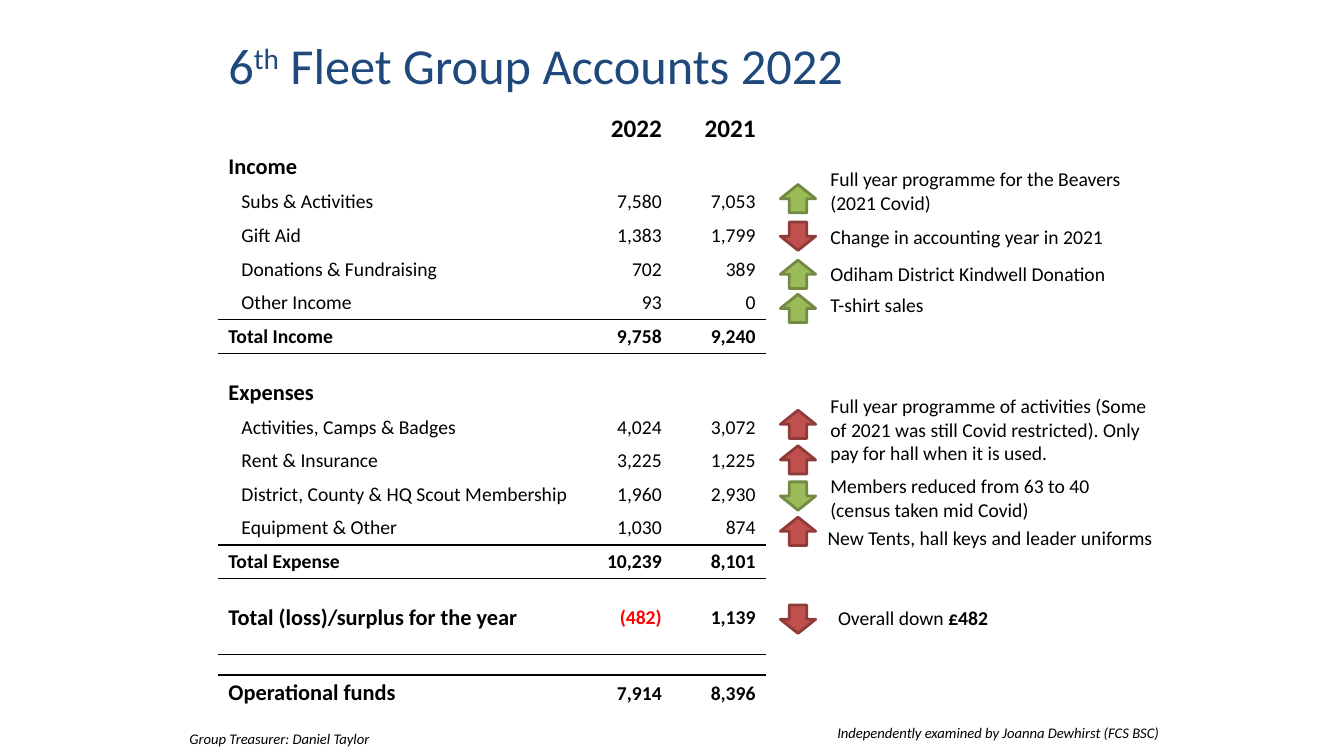
from dataclasses import dataclass

from lxml import etree
from pptx import Presentation
from pptx.dml.color import RGBColor
from pptx.enum.shapes import MSO_SHAPE
from pptx.enum.text import MSO_ANCHOR, MSO_AUTO_SIZE, PP_ALIGN
from pptx.oxml.ns import qn
from pptx.util import Pt

UP_ARROW = MSO_SHAPE.UP_ARROW
MIDDLE = MSO_ANCHOR.MIDDLE
TOP = MSO_ANCHOR.TOP
GROW = MSO_AUTO_SIZE.SHAPE_TO_FIT_TEXT
FIXED = MSO_AUTO_SIZE.NONE
LEFT = PP_ALIGN.LEFT
RIGHT = PP_ALIGN.RIGHT
NO_TABLE_STYLE = "{2D5ABB26-0587-4C30-8999-92F81FD0307C}"


@dataclass(frozen=True)
class Theme:
    font: str = "Calibri"
    ink: str = "000000"
    title_ink: str = "1F497D"
    loss: str = "FF0000"
    good: tuple[str, str] = ("9BBB59", "738A42")
    bad: tuple[str, str] = ("C0504D", "8E3B39")
    title: float = 36
    years: float = 18
    heading: float = 16
    body: float = 14
    credit: float = 10.5
    spacer: float = 4


THEME = Theme()


@dataclass(frozen=True)
class Span:
    text: str
    size: float = THEME.body
    bold: bool = False
    italic: bool = False
    color: str = THEME.ink
    baseline: int = 0


@dataclass(frozen=True)
class Account:
    height: float
    label: str = ""
    values: tuple[str, str] = ("", "")
    label_size: float = THEME.body
    value_size: float = THEME.body
    bold: bool = True
    indent: float = 0
    ruled: bool = False


@dataclass(frozen=True)
class Note:
    left: float
    top: float
    width: float
    height: float
    spans: tuple[Span, ...]
    wrap: bool = True
    anchor: MSO_ANCHOR = TOP
    auto_size: MSO_AUTO_SIZE = GROW


@dataclass(frozen=True)
class Trend:
    top: float
    colors: tuple[str, str]
    down: bool = False


def item(label: str, now: str, before: str, ruled: bool = False) -> Account:
    return Account(24, label, (now, before), bold=False, indent=9.3, ruled=ruled)


def heading(label: str, now: str = "", before: str = "", height: float = 26) -> Account:
    return Account(height, label, (now, before), label_size=THEME.heading)


def remark(top: float, height: float, text: str, left: float = 586, width: float = 248) -> Note:
    return Note(left, top, width, height, (Span(text),))


def credit(left: float, top: float, width: float, text: str) -> Note:
    return Note(left, top, width, 20, (Span(text, THEME.credit, italic=True),), wrap=False)


ACCOUNTS = (
    Account(29.5, values=("2022", "2021"), value_size=THEME.years),
    heading("Income"),
    item("Subs & Activities", "7,580", "7,053"),
    item("Gift Aid", "1,383", "1,799"),
    item("Donations & Fundraising", "702", "389"),
    item("Other Income", "93", "0", ruled=True),
    Account(24, "Total Income", ("9,758", "9,240")),
    Account(15),
    heading("Expenses"),
    item("Activities, Camps & Badges", "4,024", "3,072"),
    item("Rent & Insurance", "3,225", "1,225"),
    item("District, County & HQ Scout Membership", "1,960", "2,930"),
    item("Equipment & Other", "1,030", "874", ruled=True),
    Account(24, "Total Expense", ("10,239", "8,101")),
    Account(14.5),
    heading("Total (loss)/surplus for the year", "(482)", "1,139", 26.5),
    Account(13.5, ruled=True),
    Account(14.5),
    heading("Operational funds", "7,914", "8,396"),
)

TITLE = Note(
    156, 15.6, 648, 61,
    (
        Span("6", THEME.title, color=THEME.title_ink),
        Span("th", THEME.title, color=THEME.title_ink, baseline=30000),
        Span(" Fleet Group Accounts 2022", THEME.title, color=THEME.title_ink),
    ),
    anchor=MIDDLE, auto_size=FIXED,
)

NOTES = (
    TITLE,
    credit(591, 513.4, 248, "Independently examined by Joanna Dewhirst (FCS BSC)"),
    credit(128.2, 517.7, 147, "Group Treasurer: Daniel Taylor"),
    remark(116, 41, "Full year programme for the Beavers (2021 Covid)"),
    remark(157, 24.5, "Change in accounting year in 2021"),
    remark(183.6, 24.5, "Odiham District Kindwell Donation"),
    remark(206, 24.5, "T-shirt sales"),
    remark(278, 58, "Full year programme of activities (Some of 2021 was still Covid "
           "restricted). Only pay for hall when it is used.", width=252),
    remark(335, 41, "Members reduced from 63 to 40 (census taken mid Covid)", width=227),
    remark(372.3, 24.5, "New Tents, hall keys and leader uniforms", left=584),
    Note(591.5, 429, 248, 24.5, (Span("Overall down "), Span("£482", bold=True))),
)

TRENDS = (
    Trend(131.8, THEME.good),
    Trend(158.6, THEME.bad, down=True),
    Trend(185.8, THEME.good),
    Trend(210.2, THEME.good),
    Trend(293, THEME.bad),
    Trend(318.4, THEME.bad),
    Trend(344.2, THEME.good, down=True),
    Trend(369.4, THEME.bad),
    Trend(432.2, THEME.bad, down=True),
)


def add_span(paragraph, span: Span) -> None:
    run = paragraph.add_run()
    run.text = span.text
    run.font.name = THEME.font
    run.font.size = Pt(span.size)
    run.font.bold = span.bold
    run.font.italic = span.italic
    run.font.color.rgb = RGBColor.from_string(span.color)
    if span.baseline:
        run._r.get_or_add_rPr().set("baseline", str(span.baseline))


def add_note(slide, note: Note) -> None:
    box = slide.shapes.add_textbox(Pt(note.left), Pt(note.top), Pt(note.width), Pt(note.height))
    frame = box.text_frame
    frame.word_wrap = note.wrap
    frame.auto_size = note.auto_size
    frame.vertical_anchor = note.anchor
    for span in note.spans:
        add_span(frame.paragraphs[0], span)


def add_trend(slide, trend: Trend) -> None:
    arrow = slide.shapes.add_shape(UP_ARROW, Pt(557.4), Pt(trend.top), Pt(25.2), Pt(20.2))
    fill, line = trend.colors
    arrow.shadow.inherit = False
    arrow.rotation = 180 if trend.down else 0
    arrow.fill.solid()
    arrow.fill.fore_color.rgb = RGBColor.from_string(fill)
    arrow.line.color.rgb = RGBColor.from_string(line)
    arrow.line.width = Pt(2)


def add_rule(cell, side: str) -> None:
    properties = cell._tc.get_or_add_tcPr()
    rule = etree.Element(qn(side), w=str(Pt(1)))
    fill = etree.SubElement(rule, qn("a:solidFill"))
    etree.SubElement(fill, qn("a:srgbClr"), val=THEME.ink)
    properties.insert(0, rule)


def fill_cell(cell, span: Span, align: PP_ALIGN, indent: float) -> None:
    cell.fill.background()
    cell.vertical_anchor = MIDDLE
    cell.margin_left = Pt(7.2 + indent)
    cell.margin_top = cell.margin_bottom = Pt(3)
    paragraph = cell.text_frame.paragraphs[0]
    paragraph.alignment = align
    if span.text:
        add_span(paragraph, span)
    else:
        etree.SubElement(paragraph._p, qn("a:endParaRPr"), sz=str(int(THEME.spacer * 100)))


def add_accounts(slide, accounts: tuple[Account, ...]) -> None:
    widths = (266, 58, 67)
    total_height = sum(account.height for account in accounts)
    table = slide.shapes.add_table(
        len(accounts), len(widths), Pt(156), Pt(77), Pt(sum(widths)), Pt(total_height)
    ).table
    table.first_row = table.horz_banding = False
    table._tbl.tblPr.find(qn("a:tableStyleId")).text = NO_TABLE_STYLE
    for column, width in zip(table.columns, widths):
        column.width = Pt(width)
    ruled_above = False
    for row, account in zip(table.rows, accounts):
        row.height = Pt(account.height)
        for index, text in enumerate((account.label, *account.values)):
            cell = row.cells[index]
            size = account.value_size if index else account.label_size
            color = THEME.loss if text.startswith("(") else THEME.ink
            fill_cell(cell, Span(text, size, account.bold, color=color),
                      RIGHT if index else LEFT, 0 if index else account.indent)
            if account.ruled:
                add_rule(cell, "a:lnB")
            if ruled_above:
                add_rule(cell, "a:lnT")
        ruled_above = account.ruled


def main() -> None:
    deck = Presentation()
    deck.slide_width, deck.slide_height = Pt(960), Pt(540)
    slide = deck.slides.add_slide(deck.slide_layouts[6])
    add_accounts(slide, ACCOUNTS)
    for note in NOTES:
        add_note(slide, note)
    for trend in TRENDS:
        add_trend(slide, trend)
    deck.save("out.pptx")


if __name__ == "__main__":
    main()
